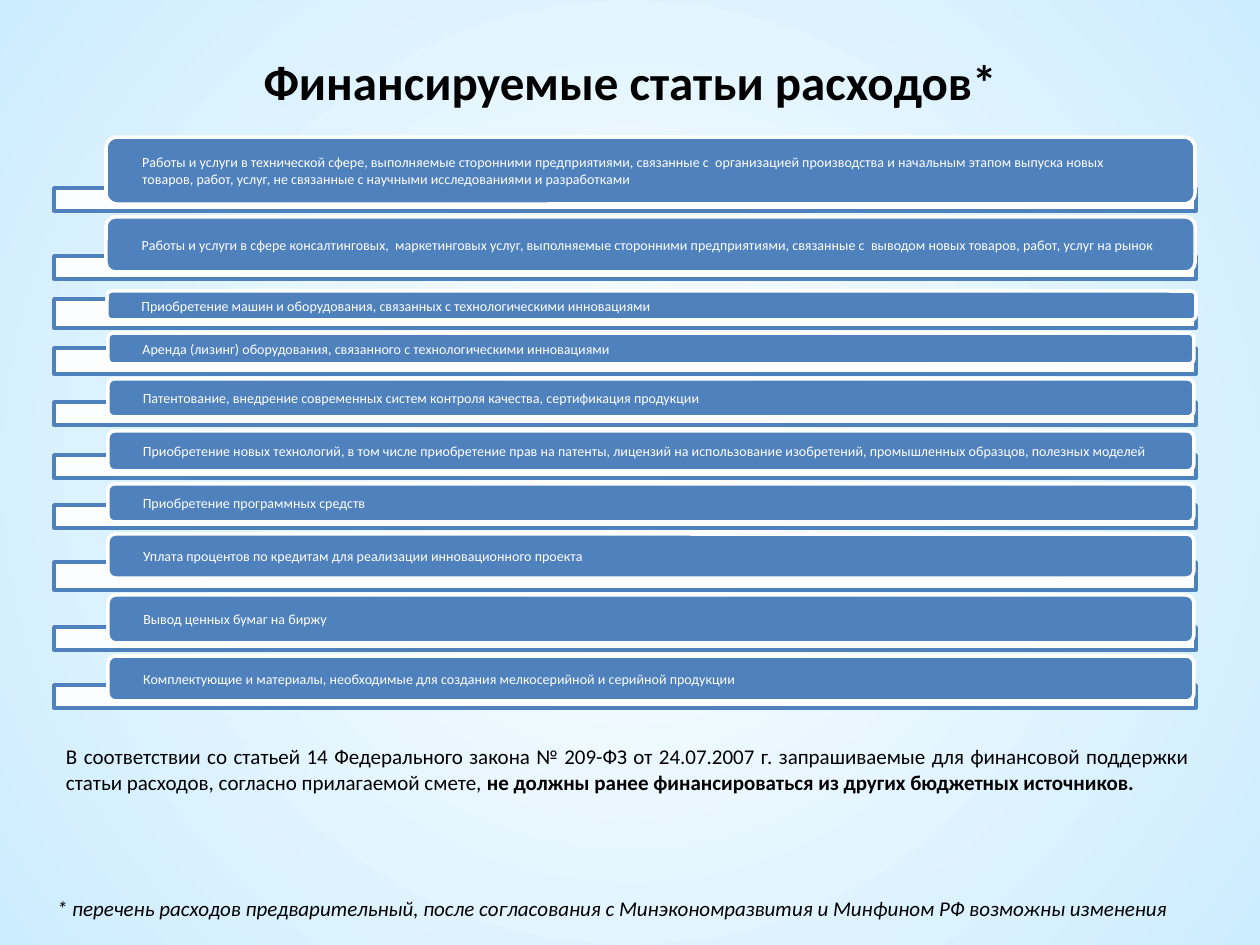
from lxml import etree
from pptx import Presentation
from pptx.dml.color import RGBColor
from pptx.enum.shapes import MSO_SHAPE
from pptx.enum.text import MSO_ANCHOR, PP_ALIGN
from pptx.oxml.ns import qn
from pptx.util import Emu, Pt

RECTANGLE = MSO_SHAPE.RECTANGLE
ROUNDED = MSO_SHAPE.ROUNDED_RECTANGLE
TOP, MIDDLE = MSO_ANCHOR.TOP, MSO_ANCHOR.MIDDLE
LEFT, CENTER, JUSTIFY = PP_ALIGN.LEFT, PP_ALIGN.CENTER, PP_ALIGN.JUSTIFY

PX_PER_INCH = 126
FONT = "Calibri"
BLUE, WHITE, BLACK, SKY = "4F81BD", "FFFFFF", "000000", "CCECFF"
BAR_LEFT, BAR_WIDTH = 54, 1142

EXPENSES = [
    (188, 23, 106, 137, 1089, 67,
     "Работы и услуги в технической сфере, выполняемые сторонними предприятиями, связанные с  организацией "
     "производства и начальным этапом выпуска новых товаров, работ, услуг, не связанные с научными "
     "исследованиями и разработками"),
    (256, 23, 106, 217, 1089, 55,
     "Работы и услуги в сфере консалтинговых,  маркетинговых услуг, выполняемые сторонними предприятиями, "
     "связанные с  выводом новых товаров, работ, услуг на рынок"),
    (299, 29, 107, 291, 1089, 29,
     "Приобретение машин и оборудования, связанных с технологическими инновациями"),
    (348, 26, 108, 333, 1086, 31,
     "Аренда (лизинг) оборудования, связанного с технологическими инновациями"),
    (402, 23, 108, 379, 1086, 38,
     "Патентование, внедрение современных систем контроля качества, сертификация продукции"),
    (455, 23, 108, 431, 1086, 40,
     "Приобретение новых технологий, в том числе приобретение прав на патенты, лицензий на использование "
     "изобретений, промышленных образцов, полезных моделей"),
    (505, 23, 108, 484, 1086, 38, "Приобретение программных средств"),
    (562, 28, 108, 534, 1086, 44,
     "Уплата процентов по кредитам для реализации инновационного проекта"),
    (627, 23, 108, 595, 1086, 48, "Вывод ценных бумаг на биржу"),
    (685, 23, 108, 656, 1086, 45,
     "Комплектующие и материалы, необходимые для создания мелкосерийной и серийной продукции"),
]


def px(value):
    return Emu(round(value * 914400 / PX_PER_INCH))


def color(value):
    return RGBColor.from_string(value)


def write_text(shape, *runs, size, fill=BLACK, align=LEFT, anchor=TOP,
               italic=False, insets=(13, 6, 13, 6)):
    frame = shape.text_frame
    frame.word_wrap = True
    frame.vertical_anchor = anchor
    frame.margin_left, frame.margin_top, frame.margin_right, frame.margin_bottom = map(px, insets)
    paragraph = frame.paragraphs[0]
    paragraph.alignment = align
    for text, bold in runs:
        run = paragraph.add_run()
        run.text = text
        run.font.name = FONT
        run.font.size = Pt(size)
        run.font.bold = bold
        run.font.italic = italic
        run.font.color.rgb = color(fill)


def add_text(slide, box, *runs, **text_format):
    shape = slide.shapes.add_textbox(*map(px, box))
    write_text(shape, *runs, **text_format)


def add_box(slide, kind, box, fill, line, opacity=100):
    shape = slide.shapes.add_shape(kind, *map(px, box))
    shape.shadow.inherit = False
    shape.fill.solid()
    shape.fill.fore_color.rgb = color(fill)
    shape.line.color.rgb = color(line)
    shape.line.width = Pt(2)
    if opacity < 100:
        fill_color = shape.element.spPr.find(qn("a:solidFill"))[0]
        etree.SubElement(fill_color, qn("a:alpha"), val=str(opacity * 1000))
    return shape


def add_expense(slide, bar_top, bar_height, left, top, width, height, text):
    add_box(slide, RECTANGLE, (BAR_LEFT, bar_top, BAR_WIDTH, bar_height), WHITE, BLUE, opacity=90)
    card = add_box(slide, ROUNDED, (left, top, width, height), BLUE, WHITE)
    write_text(card, (text, False), size=8, fill=WHITE, anchor=MIDDLE, insets=(33, 0, 33, 0))


def set_radial_background(slide, inner, outer):
    fill = slide.background.fill
    fill.gradient()
    for stop, position, value in zip(fill.gradient_stops, (0, 1), (inner, outer)):
        stop.position = position
        stop.color.rgb = color(value)
    gradient = next(slide.element.iter(qn("a:gradFill")))
    linear = gradient.find(qn("a:lin"))
    radial = etree.Element(qn("a:path"), path="circle")
    etree.SubElement(radial, qn("a:fillToRect"), l="50000", t="50000", r="50000", b="50000")
    gradient.replace(linear, radial)


def main():
    presentation = Presentation()
    presentation.slide_width = px(1260)
    presentation.slide_height = px(945)
    slide = presentation.slides.add_slide(presentation.slide_layouts[6])
    set_radial_background(slide, WHITE, SKY)

    add_text(slide, (63, 16, 1134, 129), ("Финансируемые статьи расходов*", True),
             size=28, align=CENTER, anchor=MIDDLE)
    for expense in EXPENSES:
        add_expense(slide, *expense)
    add_text(slide, (53, 721, 1150, 81),
             ("В соответствии со статьей 14 Федерального закона № 209-ФЗ от 24.07.2007 г. запрашиваемые для "
              "финансовой поддержки статьи расходов, согласно прилагаемой смете, ", False),
             ("не должны ранее финансироваться из других бюджетных источников.", True),
             size=12, align=JUSTIFY, insets=(13, 23, 13, 6))
    add_text(slide, (44, 890, 1150, 38),
             ("* перечень расходов предварительный, после согласования с Минэкономразвития и Минфином РФ "
              "возможны изменения", False),
             size=12, align=JUSTIFY, italic=True)
    presentation.save("out.pptx")


if __name__ == "__main__":
    main()
